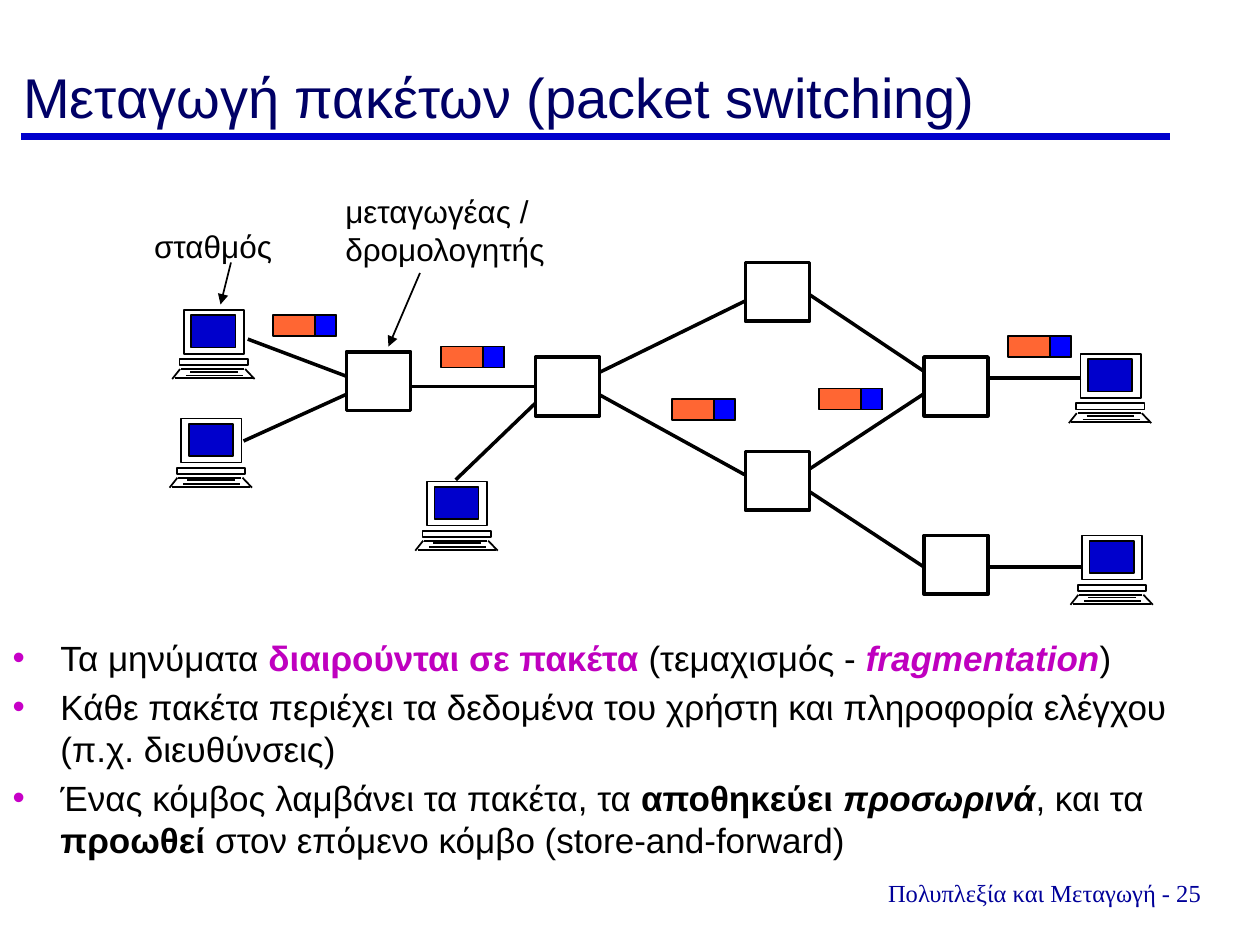
from pptx import Presentation
from pptx.dml.color import RGBColor
from pptx.enum.shapes import MSO_CONNECTOR as Conn, MSO_SHAPE as Geo
from pptx.enum.text import MSO_ANCHOR as Anchor, MSO_AUTO_SIZE as Auto, PP_ALIGN as Align
from pptx.oxml.ns import qn
from pptx.util import Inches, Pt
from lxml.etree import SubElement

# The slide is a grid of 120 columns by 90 rows, twelve to the inch
COLS, ROWS, STEP = 120, 90, Inches(1) / 12
BLACK, WHITE, PINK = "000000", "FFFFFF", "BF00BF"

# Left and top of each node, packet and station
NODES = [(33, 33.5), (51, 34), (71, 25), (71, 43), (88, 34), (88, 51)]
PACKS = [(26, 30), (42, 33), (64, 38), (78, 37), (96, 32)]
HOSTS = [(17.5, 29.5), (17.25, 39.85), (40.65, 45.85), (103.05, 51), (102.9, 33.7)]

# Ends of each link: x1, y1, x2, y2
LINKS = [
    (39.2, 36.8, 51.2, 36.8), (56, 36, 70.9, 28.7), (56, 37, 70.9, 45.2),
    (77, 28, 88.2, 35.5), (76.9, 44.8, 88.3, 37.3), (76.9, 46.7, 88, 54),
    (51.2, 38.2, 43.4, 45.7), (23.6, 32.3, 32.9, 35.8), (23.2, 42, 32.9, 37.6),
    (94, 54, 103, 54), (103, 36, 94, 36),
]
# Keyboard strokes, measured from the station's corner
KEYS = [
    (-0.25, 5.65, 5.75, 5.65), (0.6, 5.9, 5.15, 5.9), (0.2, 6.25, 5.65, 6.25),
    (-0.85, 6.5, 6.6, 6.5), (5.85, 5.65, 6.75, 6.6), (-0.35, 5.65, -1.1, 6.6),
]

PLAIN = {}
MARK = {"bold": True, "color": PINK}
BOLD = {"bold": True}
BOTH = {"bold": True, "italic": True}
POINTS = [
    [("Τα μηνύματα ", PLAIN), ("διαιρούνται σε πακέτα ", MARK),
     ("(τεμαχισμός - ", PLAIN), ("fragmentation", {**MARK, "italic": True}), (")", PLAIN)],
    [("Κάθε πακέτα περιέχει τα δεδομένα του χρήστη και πληροφορία ελέγχου "
      "(π.χ. διευθύνσεις)", PLAIN)],
    [("Ένας κόμβος λαμβάνει τα πακέτα, τα ", PLAIN), ("αποθηκεύει ", BOLD),
     ("προσωρινά", BOTH), (", και τα ", PLAIN), ("προωθεί ", BOLD),
     ("στον επόμενο κόμβο (store-and-forward)", PLAIN)],
]


def rgb(code):
    return RGBColor.from_string(code)


def grid(*vals):
    return [round(val * STEP) for val in vals]


def place(shape, *box):
    for name, val in zip(("left", "top", "width", "height"), grid(*box)):
        setattr(shape, name, val)


def add_run(para, text, size, color=BLACK, name="Arial", **style):
    run = para.add_run()
    run.text = text
    look = {"size": Pt(size), "name": name, "bold": False, "italic": False, **style}
    for key, val in look.items():
        setattr(run.font, key, val)
    run.font.color.rgb = rgb(color)


def box(shapes, *area, fill=None, width=1):
    shape = shapes.add_shape(Geo.RECTANGLE, *grid(*area))
    shape.shadow.inherit = False
    if fill:
        shape.fill.solid()
        shape.fill.fore_color.rgb = rgb(fill)
    else:
        shape.fill.background()
    shape.line.color.rgb = rgb(BLACK)
    shape.line.width = Pt(width)


def line(shapes, *ends, color=BLACK, width=1, arrow=False):
    link = shapes.add_connector(Conn.STRAIGHT, *grid(*ends))
    link.line.color.rgb = rgb(color)
    link.line.width = Pt(width)
    if arrow:
        SubElement(link.line._get_or_add_ln(), qn("a:tailEnd"), type="triangle")
    SubElement(link._element.spPr, qn("a:effectLst"))


def host(shapes, x, y):
    parts = shapes.add_group_shape().shapes
    box(parts, x, y, 5.75, 4.2)
    box(parts, x + 0.72, y + 0.5, 4.2, 3.1, fill="0000CC")
    box(parts, x - 0.4, y + 4.7, 6.5, 0.6)
    for x1, y1, x2, y2 in KEYS:
        line(parts, x + x1, y + y1, x + x2, y + y2)


def pack(shapes, x, y):
    parts = shapes.add_group_shape().shapes
    box(parts, x, y, 6, 2, fill="FF6633")
    box(parts, x + 4, y, 2, 2, fill="0000FF")


def label(shapes, text, *area, align=Align.LEFT, wrap=True, **style):
    frame = shapes.add_textbox(*grid(*area)).text_frame
    frame.word_wrap = wrap
    para = frame.paragraphs[0]
    para.alignment = align
    add_run(para, text, **style)


def bullet(para):
    props = para._p.get_or_add_pPr()
    props.set("marL", str(Inches(0.38)))
    props.set("indent", str(Inches(-0.38)))
    tint = SubElement(props, qn("a:buClr"))
    SubElement(tint, qn("a:srgbClr"), val="C700C7")
    SubElement(props, qn("a:buFont"), typeface="Arial")
    SubElement(props, qn("a:buChar"), char="•")


def head(slide):
    title = slide.shapes.title
    place(title, 1, 3, 116, 10)
    frame = title.text_frame
    frame.auto_size = Auto.NONE
    frame.vertical_anchor = Anchor.BOTTOM
    para = frame.paragraphs[0]
    para.alignment = Align.LEFT
    add_run(para, "Μεταγωγή πακέτων (packet switching)", 32, "000066")


def body(slide):
    holder = slide.placeholders[1]
    place(holder, 0, 60, COLS, 25)
    frame = holder.text_frame
    frame.auto_size = Auto.NONE
    for num, runs in enumerate(POINTS):
        para = frame.add_paragraph() if num else frame.paragraphs[0]
        para.space_before = Pt(4)
        bullet(para)
        for text, style in runs:
            add_run(para, text, 20, **style)


def net(shapes):
    for ends in LINKS:
        line(shapes, *ends, width=2)
    for x, y in HOSTS:
        host(shapes, x, y)
    for x, y in NODES:
        box(shapes, x, y, 6.1, 5.6, fill=WHITE, width=2)
    for x, y in PACKS:
        pack(shapes, x, y)


def main():
    deck = Presentation()
    deck.slide_width, deck.slide_height = grid(COLS, ROWS)
    slide = deck.slides.add_slide(deck.slide_layouts[1])
    shapes = slide.shapes

    # Rule under the title, and footer
    line(shapes, 2, 13, 111.4, 13, color="0000CC", width=4)
    label(shapes, "Πολυπλεξία και Μεταγωγή - 25", 82, 83, 35, 4,
          align=Align.CENTER, size=14, name="Times New Roman", color="000099")

    # Title and list
    head(slide)
    body(slide)

    # Network with its two callouts
    net(shapes)
    label(shapes, "σταθμός", 13.4, 21, 13.7, 4.8, align=Align.RIGHT, wrap=False, size=18)
    line(shapes, 22, 25, 21, 29, arrow=True)
    label(shapes, "μεταγωγέας / δρομολογητής", 31.7, 17.7, 29.9, 8.4, size=18)
    line(shapes, 40, 26, 37, 33, arrow=True)

    deck.save("out.pptx")


if __name__ == "__main__":
    main()
